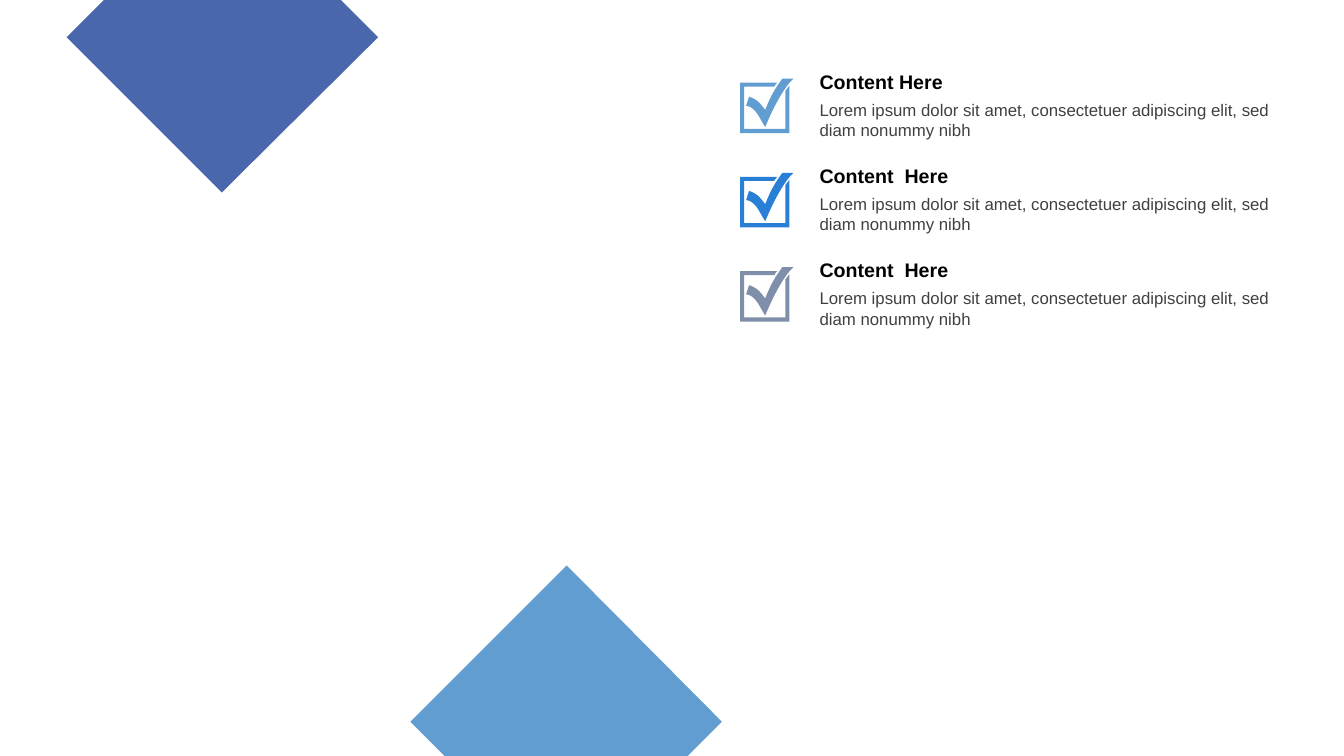
import pptx
import pptx.dml.color
import pptx.enum.text
import pptx.util

Inches = pptx.util.Inches
Pt = pptx.util.Pt

BODY = "Lorem ipsum dolor sit amet, consectetuer adipiscing elit, sed diam nonummy nibh"
ITEMS = [
    ("Content Here", BODY, "629DD1"),
    ("Content  Here", BODY, "297FD5"),
    ("Content  Here", BODY, "7F8FA9"),
]
DIAMONDS = [
    ([(1.03, 0), (3.38, 0), (3.75, 0.37), (2.2, 1.91), (0.66, 0.37)], "4A66AC"),
    ([(5.62, 5.61), (7.16, 7.16), (6.82, 7.5), (4.41, 7.5), (4.07, 7.16)], "629DD1"),
]
# Each step holds one point for a line or three for a Bezier curve.
BOX = [
    [(0, 0.04)], [(0.37, 0.04)], [(0.36, 0.05), (0.35, 0.06), (0.34, 0.08)],
    [(0.04, 0.08)], [(0.04, 0.5)], [(0.45, 0.5)], [(0.45, 0.12)],
    [(0.47, 0.1), (0.48, 0.08), (0.49, 0.07)], [(0.49, 0.54)], [(0, 0.54)],
]
TICK = [
    [(0.53, 0)], [(0.43, 0.09), (0.32, 0.31), (0.25, 0.48)],
    [(0.2, 0.41), (0.16, 0.28), (0.06, 0.27)], [(0.09, 0.18)],
    [(0.18, 0.21), (0.2, 0.25), (0.25, 0.31)],
    [(0.3, 0.19), (0.32, 0.14), (0.42, 0)],
]
FIRST_TOP, LAST_TOP = 0.64, 2.51
TEXT_LEFT, TEXT_WIDTH = 8.03, 4.82
ICON_LEFT, ICON_OFFSET, BODY_OFFSET = 7.34, 0.14, 0.3
CURVE_STEPS = 10


def color(value):
    return pptx.dml.color.RGBColor.from_string(value)


def flatten(steps):
    points = []
    for step in steps:
        if len(step) == 1:
            points.append(step[0])
            continue
        corners = [points[-1], *step]
        for index in range(1, CURVE_STEPS + 1):
            t = index / CURVE_STEPS
            weights = ((1 - t) ** 3, 3 * t * (1 - t) ** 2, 3 * t * t * (1 - t), t ** 3)
            points.append(tuple(
                sum(weight * corner[axis] for weight, corner in zip(weights, corners))
                for axis in (0, 1)
            ))
    return points


def add_outline(slide, contours, fill, left=0, top=0):
    builder = None
    for contour in contours:
        points = [(Inches(left + x), Inches(top + y)) for x, y in contour]
        if builder is None:
            builder = slide.shapes.build_freeform(*points[0], scale=1.0)
        else:
            builder.move_to(*points[0])
        builder.add_line_segments(points[1:], close=True)
    shape = builder.convert_to_shape()
    shape.shadow.inherit = False
    shape.fill.solid()
    shape.fill.fore_color.rgb = color(fill)
    shape.line.fill.background()


def add_text(slide, text, top, height, size, fill, bold, anchor):
    box = slide.shapes.add_textbox(
        Inches(TEXT_LEFT), Inches(top), Inches(TEXT_WIDTH), Inches(height))
    frame = box.text_frame
    frame.word_wrap = True
    frame.vertical_anchor = anchor
    paragraph = frame.paragraphs[0]
    paragraph.text = text
    paragraph.font.name = "Arial"
    paragraph.font.size = Pt(size)
    paragraph.font.bold = bold
    paragraph.font.color.rgb = color(fill)


def main():
    presentation = pptx.Presentation()
    presentation.slide_width = Inches(13.33)
    presentation.slide_height = Inches(7.5)
    slide = presentation.slides.add_slide(presentation.slide_layouts[6])
    anchors = pptx.enum.text.MSO_ANCHOR
    pitch = (LAST_TOP - FIRST_TOP) / (len(ITEMS) - 1)
    checkmark = [flatten(BOX), flatten(TICK)]

    for row, (title, body, fill) in enumerate(ITEMS):
        top = FIRST_TOP + row * pitch
        add_text(slide, body, top + BODY_OFFSET, 0.5, 12, "404040", False, anchors.TOP)
        add_text(slide, title, top, 0.34, 14, "000000", True, anchors.MIDDLE)
        add_outline(slide, checkmark, fill, ICON_LEFT, top + ICON_OFFSET)

    for corners, fill in DIAMONDS:
        add_outline(slide, [corners], fill)

    presentation.save("out.pptx")


if __name__ == "__main__":
    main()
